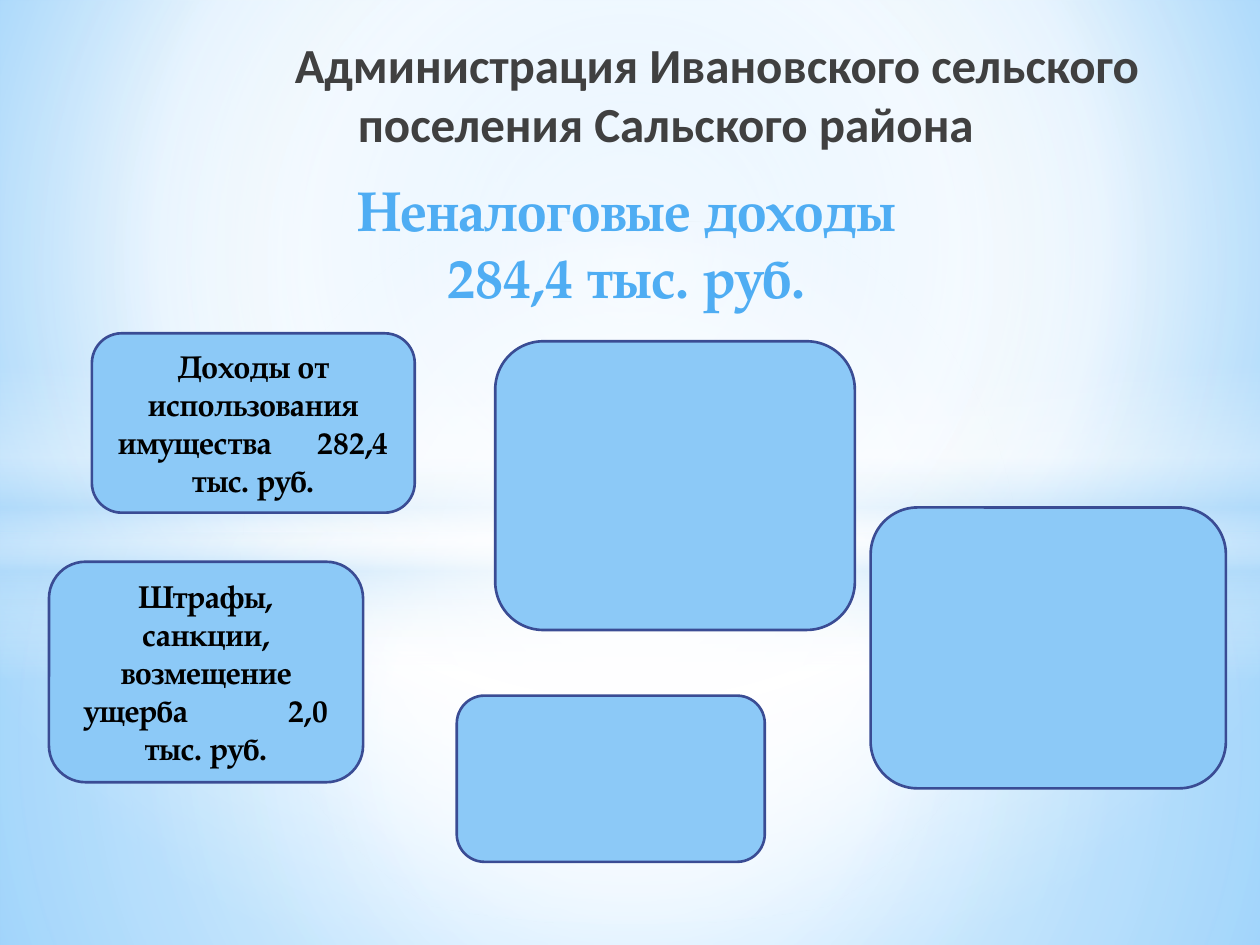
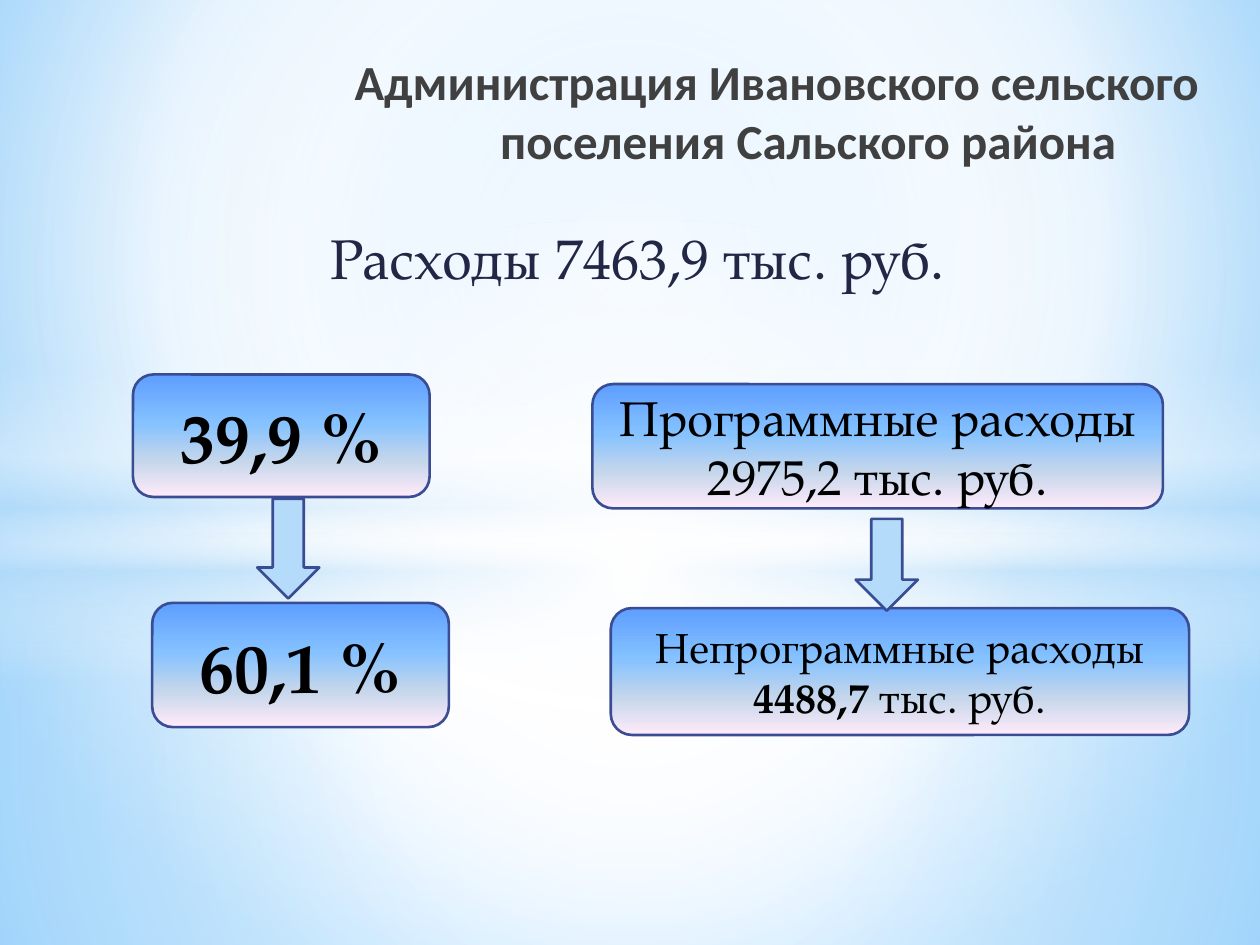
import pptx
import pptx.util
import pptx.dml.color
import pptx.enum.shapes
import pptx.enum.text
import pptx.oxml.ns
import lxml.etree

Pt = pptx.util.Pt
RGBColor = pptx.dml.color.RGBColor
MSO_SHAPE = pptx.enum.shapes.MSO_SHAPE
CENTER = pptx.enum.text.PP_ALIGN.CENTER
LEFT = pptx.enum.text.PP_ALIGN.LEFT
MIDDLE = pptx.enum.text.MSO_ANCHOR.MIDDLE
TOP = pptx.enum.text.MSO_ANCHOR.TOP
qn = pptx.oxml.ns.qn

WHITE = RGBColor(0xFF, 0xFF, 0xFF)
BLACK = RGBColor(0, 0, 0)
GRAY = RGBColor(0x40, 0x40, 0x40)
NAVY = RGBColor(0x21, 0x27, 0x45)
SKY = RGBColor(0x4F, 0xAD, 0xF3)
PALE = RGBColor(0xB4, 0xDC, 0xFA)
INCOME_BLUE = RGBColor(0x8C, 0xC9, 0xF7)
OUTLINE = RGBColor(0x3A, 0x4C, 0x94)
SKY_GLOW = [(0, RGBColor(0x9E, 0xD5, 0xFF), 100), (60, WHITE, 100),
            (100, RGBColor(0x5B, 0xB9, 0xFF), 100)]
EXPENSE_STOPS = [(0, RGBColor(0x5E, 0x9E, 0xFF), 100), (40, RGBColor(0x85, 0xC2, 0xFF), 100),
                 (70, RGBColor(0xC4, 0xD6, 0xEB), 100), (100, RGBColor(0xFF, 0xEB, 0xFA), 100)]
SERIF = "TeX Gyre Pagella"
MIDPOINT = (50, 50, 50, 50)
ADMINISTRATION = "Администрация Ивановского сельского поселения Сальского района"


def paint_gradient(fill, stops, focus=None):
    fill.gradient()
    gradient = fill._fill._gradFill
    for child in list(gradient):
        gradient.remove(child)
    stop_list = lxml.etree.SubElement(gradient, qn("a:gsLst"))
    for position, color, opacity in stops:
        stop = lxml.etree.SubElement(stop_list, qn("a:gs"), pos=str(position * 1000))
        tint = lxml.etree.SubElement(stop, qn("a:srgbClr"), val=str(color))
        if opacity < 100:
            lxml.etree.SubElement(tint, qn("a:alpha"), val=str(opacity * 1000))
    if focus:
        circle = lxml.etree.SubElement(gradient, qn("a:path"), path="circle")
        edges = {side: str(share * 1000) for side, share in zip("ltrb", focus)}
        lxml.etree.SubElement(circle, qn("a:fillToRect"), edges)
    else:
        lxml.etree.SubElement(gradient, qn("a:lin"), ang="5400000", scaled="0")


def write(shape, lines, size, color, bold=False, font=SERIF, align=CENTER, anchor=MIDDLE):
    frame = shape.text_frame
    frame.word_wrap = True
    frame.vertical_anchor = anchor
    for number, line in enumerate(lines):
        paragraph = frame.paragraphs[0] if number == 0 else frame.add_paragraph()
        paragraph.text = line
        paragraph.alignment = align
        paragraph.font.name = font
        paragraph.font.size = Pt(size)
        paragraph.font.bold = bold
        paragraph.font.color.rgb = color
    return frame


deck = pptx.Presentation()
deck.slide_width, deck.slide_height = Pt(720), Pt(540)
blank = deck.slide_layouts[6]
income = deck.slides.add_slide(blank)
expenses = deck.slides.add_slide(blank)

master = deck.slide_master
paint_gradient(master.background.fill, SKY_GLOW, (20, 10, 20, 60))
glows = [
    (MSO_SHAPE.RECTANGLE, 304.5, 235.5, MIDPOINT,
     [(0, WHITE, 91), (37, WHITE, 76), (100, PALE, 79)]),
    (MSO_SHAPE.RECTANGLE, 0, 304.5, MIDPOINT,
     [(0, WHITE, 89), (48, WHITE, 62), (100, PALE, 79)]),
    (MSO_SHAPE.RECTANGLE, 209, 180, None,
     [(0, WHITE, 0), (29, WHITE, 30), (45, PALE, 40), (55, WHITE, 26), (65, PALE, 60),
      (100, WHITE, 0)]),
    (MSO_SHAPE.OVAL, 126, 402, MIDPOINT, [(0, WHITE, 100), (54, WHITE, 0)]),
]
for order, (outline, top, height, focus, stops) in enumerate(glows):
    glow = income.shapes.add_shape(outline, 0, Pt(top), Pt(720), Pt(height))
    glow.shadow.inherit = False
    glow.line.fill.background()
    paint_gradient(glow.fill, stops, focus)
    glow._element._nvXxPr.cNvPr.id = 100 + order
    master.shapes._spTree.insert(2 + order, glow._element)

for slide, left, top, width, align in [(income, 147, 14.5, 553.5, LEFT),
                                       (expenses, 169, 24.5, 535, CENTER)]:
    title = slide.shapes.add_textbox(Pt(left), Pt(top), Pt(width), Pt(77.5))
    frame = write(title, [ADMINISTRATION], 28, GRAY, True, "Calibri", align)
    indents = frame.paragraphs[0]._p.get_or_add_pPr()
    indents.set("marL", str(Pt(50.4)))
    indents.set("indent", str(Pt(-36)))

income_total = income.shapes.add_textbox(Pt(47), Pt(96.5), Pt(622), Pt(85))
write(income_total, ["Неналоговые доходы", "284,4 тыс. руб."], 32, SKY, True, anchor=TOP)

income_sources = [
    (52.5, 190.5, 184.5, 102.5, "Доходы от использования имущества", "282,4\vтыс. руб.", 22),
    (28, 321, 179.5, 126, "Штрафы, санкции, возмещение ущерба", "2,0\vтыс. руб.", 53),
    (283, 195, 205.5, 165, None, None, 0),
    (261, 397.5, 176, 95, None, None, 0),
    (497.5, 290, 203, 160.5, None, None, 0),
]
for left, top, width, height, source, amount, gap in income_sources:
    card = income.shapes.add_shape(MSO_SHAPE.ROUNDED_RECTANGLE,
                                   Pt(left), Pt(top), Pt(width), Pt(height))
    card.shadow.inherit = False
    card.fill.solid()
    card.fill.fore_color.rgb = INCOME_BLUE
    card.line.color.rgb = OUTLINE
    card.line.width = Pt(1.5)
    if source:
        paragraph = write(card, [source], 18, BLACK, True).paragraphs[0]
        spacer = paragraph.add_run()
        spacer.text = " "
        spacer._r.get_or_add_rPr().set("spc", str(gap * 100))
        first, second = amount.split("\v")
        paragraph.add_run().text = first
        paragraph.add_line_break()
        paragraph.add_run().text = second

expense_total = expenses.shapes.add_textbox(Pt(106.5), Pt(124), Pt(516), Pt(69))
write(expense_total, ["Расходы 7463,9 тыс. руб."], 32, NAVY, anchor=TOP)

expense_cards = [
    (76, 214, 169.5, 70, ["39,9 %"], 40, True),
    (87, 344.5, 169.5, 71, ["60,1 %"], 40, True),
    (349, 347.5, 330.5, 72.5, ["Непрограммные расходы", ""], 24, False),
    (338.5, 219.5, 326, 71, ["Программные расходы 2975,2 тыс. руб."], 28, False),
]
for left, top, width, height, lines, size, bold in expense_cards:
    card = expenses.shapes.add_shape(MSO_SHAPE.ROUNDED_RECTANGLE,
                                     Pt(left), Pt(top), Pt(width), Pt(height))
    card.shadow.inherit = False
    paint_gradient(card.fill, EXPENSE_STOPS)
    card.line.color.rgb = OUTLINE
    card.line.width = Pt(1.5)
    frame = write(card, lines, size, BLACK, bold)
    if len(lines) == 2:
        amount = frame.paragraphs[1].add_run()
        amount.text = "4488,7 "
        amount.font.bold = True
        frame.paragraphs[1].add_run().text = "тыс. руб."

for left, top, height in [(147, 285, 57), (489, 296.5, 52.5)]:
    arrow = expenses.shapes.add_shape(MSO_SHAPE.DOWN_ARROW,
                                      Pt(left), Pt(top), Pt(35.5), Pt(height))
    arrow.shadow.inherit = False
    arrow.fill.solid()
    arrow.fill.fore_color.rgb = PALE
    arrow.line.color.rgb = OUTLINE
    arrow.line.width = Pt(1.5)

deck.save("out.pptx")
